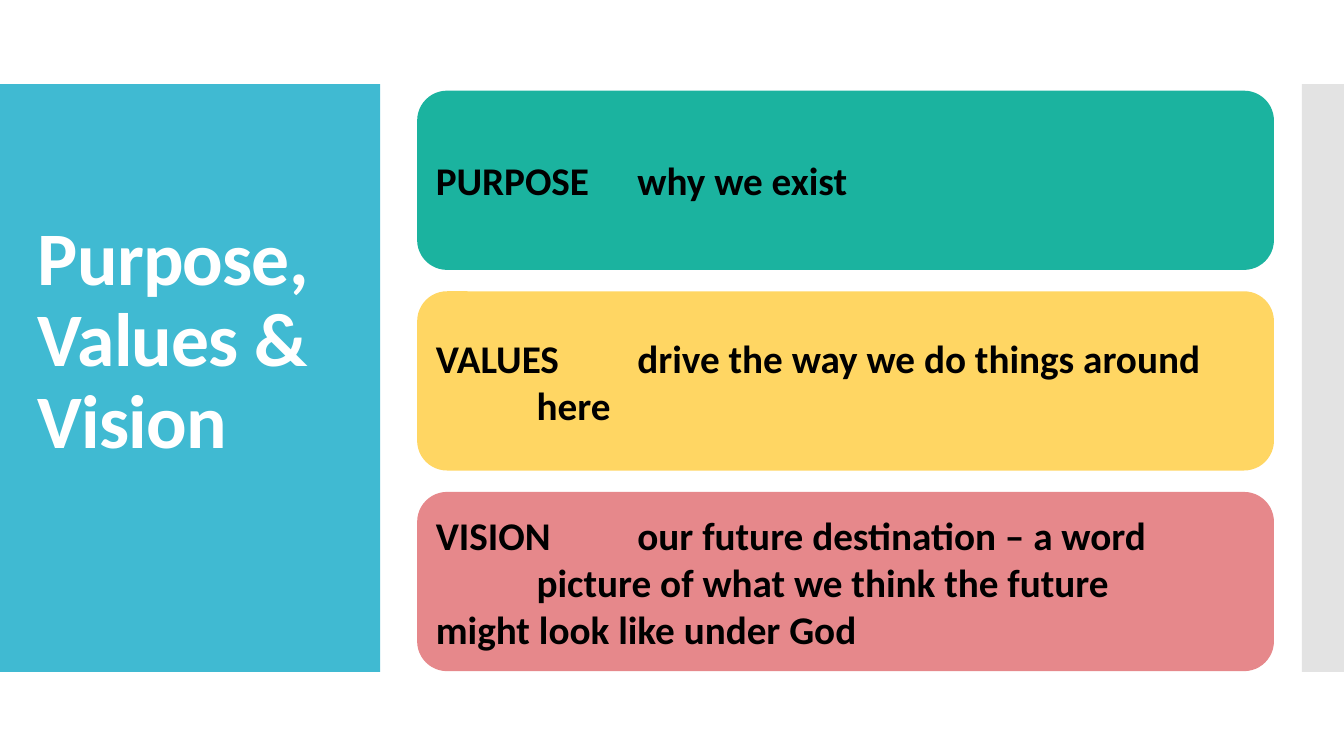
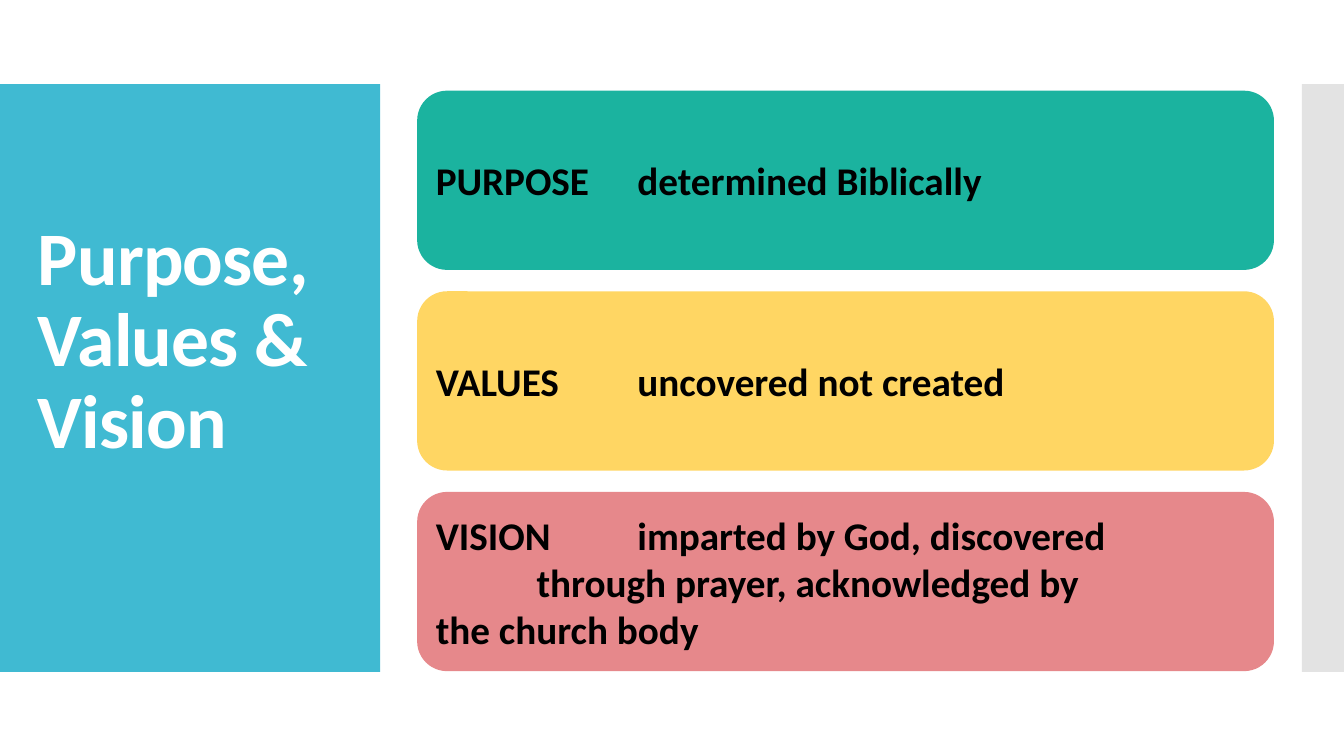
import pptx
import pptx.dml.color
import pptx.enum.shapes
import pptx.enum.text
import pptx.oxml
import pptx.oxml.ns
import pptx.util

Pt = pptx.util.Pt
Kind = pptx.enum.shapes.MSO_SHAPE
hues = {"side": "40BAD2", "edge": "C8C8C8", "head": "FFFFFF", "ink": "000000",
        "PURPOSE": "1BB39F", "VALUES": "FFD663", "VISION": "E6888B"}
frame = {"word_wrap": True, "vertical_anchor": pptx.enum.text.MSO_ANCHOR.MIDDLE}
face = {"name": "Calibri", "bold": True}
heading = "Purpose, Values & Vision"
bands = [("side", 0, 271.5), ("edge", 930, 30)]
top, step = 64.8, 143.3
stops = (72, 144)
decks = [
    {"PURPOSE": "why we exist",
     "VALUES": "drive the way we do things around\v\there",
     "VISION": "our future destination – a word\v\tpicture of what we think the future"
               "\vmight look like under God"},
    {"PURPOSE": "determined Biblically",
     "VALUES": "uncovered not created",
     "VISION": "imparted by God, discovered\v\tthrough prayer, acknowledged by"
               "\vthe church body"},
]


def draw(slide, kind, hue, *box):
    shape = slide.shapes.add_shape(kind, *map(Pt, box))
    shape.shadow.inherit = False
    shape.fill.solid()
    shape.fill.fore_color.rgb = pptx.dml.color.RGBColor.from_string(hues[hue])
    shape.line.fill.background()
    return shape


def write(shape, text, size, hue):
    body = shape.text_frame
    for key, value in frame.items():
        setattr(body, key, value)
    para = body.paragraphs[0]
    para.text = text
    para.alignment = pptx.enum.text.PP_ALIGN.LEFT
    for run in para.runs:
        for key, value in {**face, "size": Pt(size)}.items():
            setattr(run.font, key, value)
        run.font.color.rgb = pptx.dml.color.RGBColor.from_string(hues[hue])
    return para


deck = pptx.Presentation()
deck.slide_width, deck.slide_height = Pt(960), Pt(540)

for cards in decks:
    slide = deck.slides.add_slide(deck.slide_layouts[6])
    for name, left, width in bands:
        band = draw(slide, Kind.RECTANGLE, name, left, 60, width, 420)
    tint = band.fill.fore_color._xFill.find(pptx.oxml.ns.qn("a:srgbClr"))
    pptx.oxml.xmlchemy.OxmlElement("a:alpha")
    alpha = tint.makeelement(pptx.oxml.ns.qn("a:alpha"), {"val": "50000"})
    tint.append(alpha)

    title = slide.shapes.add_textbox(*map(Pt, (20, 63.4, 232, 362)))
    para = write(title, heading, 54, "head")
    para.line_spacing = 0.9
    for run in para.runs:
        run.font._element.set("spc", "-60")

    for row, (name, text) in enumerate(cards.items()):
        card = draw(slide, Kind.ROUNDED_RECTANGLE, name, 298, top + row * step, 612, 128)
        para = write(card, f"{name}\t{text}", 28, "ink")
        tabs = pptx.oxml.parse_xml(
            f"<a:tabLst {pptx.oxml.ns.nsdecls('a')}>"
            + "".join(f'<a:tab pos="{Pt(stop)}" algn="l"/>' for stop in stops)
            + "</a:tabLst>")
        para._p.get_or_add_pPr().append(tabs)

deck.save("out.pptx")
